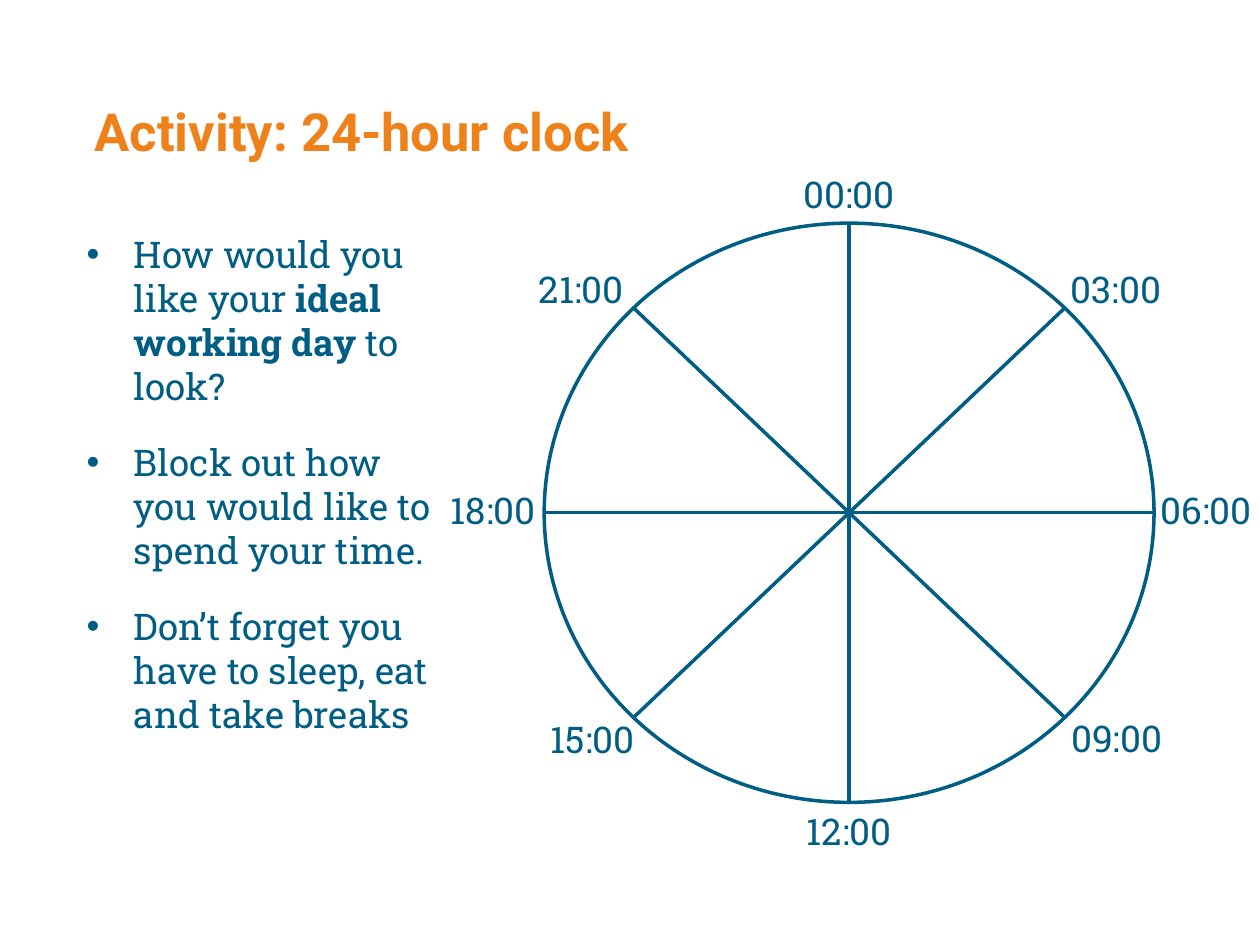
import math

import pptx
import pptx.dml.color
import pptx.enum.shapes
import pptx.enum.text
import pptx.util
from lxml import etree

Pt = pptx.util.Pt
ORANGE, TEAL, WHITE = "EF811B", "005E84", "FFFFFF"
TITLE_FONT, BODY_FONT = "Roboto", "Roboto Slab"
BULLETS = [
    [("How would you like your ", False), ("ideal working day ", True), ("to look?", False)],
    [("Block out how ", False), ("\n", False), ("you would like to spend your time.", False)],
    [("Don’t forget you have to sleep, eat and take breaks", False)],
]
HOURS = [
    ("00:00", 0, -182), ("03:00", 152.5, -128), ("06:00", 204, -1.5), ("09:00", 153, 128.5),
    ("12:00", 0, 182), ("15:00", -146.5, 129), ("18:00", -203.5, -1.5), ("21:00", -153, -128),
]


def rgb(value):
    """Turn a hex string into a colour."""
    return pptx.dml.color.RGBColor.from_string(value)


def add_span(para, text, size, font, color, bold=False):
    """Add one formatted run to a paragraph."""
    span = para.add_run()
    span.text = text
    span.font.size, span.font.name, span.font.bold = Pt(size), font, bold
    span.font.color.rgb = rgb(color)


def add_box(page, left, top, width, height, inset=0):
    """Add a wrapping text box and return its text frame."""
    frame = page.shapes.add_textbox(Pt(left), Pt(top), Pt(width), Pt(height)).text_frame
    frame.word_wrap = True
    frame.margin_left = frame.margin_right = Pt(2 * inset)
    frame.margin_top = frame.margin_bottom = Pt(inset)
    return frame


def add_title(page, left, top, width, height):
    """Place the heading."""
    para = add_box(page, left, top, width, height).paragraphs[0]
    para.line_spacing = 0.9
    add_span(para, "Activity: 24-hour clock", 30, TITLE_FONT, ORANGE, True)


def add_bullets(page, left, top, width, height):
    """Place the bulleted instructions."""
    frame = add_box(page, left, top, width, height)
    for index, spans in enumerate(BULLETS):
        para = frame.add_paragraph() if index else frame.paragraphs[0]
        para.space_after = Pt(18)
        props = para._p.get_or_add_pPr()
        props.set("marL", str(Pt(27)))
        props.set("indent", str(Pt(-27)))
        namespace = etree.QName(props).namespace
        etree.SubElement(props, f"{{{namespace}}}buFont").set("typeface", "Arial")
        etree.SubElement(props, f"{{{namespace}}}buChar").set("char", "•")
        for text, bold in spans:
            if text == "\n":
                para.add_line_break()
            else:
                add_span(para, text, 21, BODY_FONT, TEAL, bold)


def add_spoke(page, begin_x, begin_y, end_x, end_y):
    """Draw one line across the clock."""
    spoke = page.shapes.add_connector(
        pptx.enum.shapes.MSO_CONNECTOR.STRAIGHT, Pt(begin_x), Pt(begin_y), Pt(end_x), Pt(end_y))
    spoke.line.color.rgb = rgb(TEAL)
    spoke.line.width = Pt(2)
    props = spoke._element.spPr
    etree.SubElement(props, f"{{{etree.QName(props[0]).namespace}}}effectLst")


def add_clock(page, left, top, width, height):
    """Draw the clock face with its spokes and hour labels."""
    face = page.shapes.add_shape(
        pptx.enum.shapes.MSO_SHAPE.OVAL, Pt(left), Pt(top), Pt(width), Pt(height))
    face.shadow.inherit = False
    face.fill.solid()
    face.fill.fore_color.rgb = rgb(WHITE)
    face.line.color.rgb = rgb(TEAL)
    face.line.width = Pt(2)
    center_x, center_y = left + width / 2, top + height / 2
    for step in range(4):
        angle = step * math.pi / 4
        dx, dy = width / 2 * math.cos(angle), height / 2 * math.sin(angle)
        add_spoke(page, center_x - dx, center_y - dy, center_x + dx, center_y + dy)
    label_width, label_height = 85.5, 32.5
    for text, dx, dy in HOURS:
        frame = add_box(page, center_x + dx - label_width / 2, center_y + dy - label_height / 2,
                        label_width, label_height, 3.6)
        para = frame.paragraphs[0]
        para.alignment = pptx.enum.text.PP_ALIGN.CENTER
        add_span(para, text, 21, BODY_FONT, TEAL)


def main():
    """Build and save the deck."""
    deck = pptx.Presentation()
    deck.slide_width, deck.slide_height = Pt(720), Pt(540)
    page = deck.slides.add_slide(deck.slide_layouts[6])
    add_title(page, 54, 60.5, 448, 130)
    add_bullets(page, 49.5, 132.5, 223, 358.5)
    add_clock(page, 311, 127.5, 348.5, 331)
    deck.save("out.pptx")


if __name__ == "__main__":
    main()
